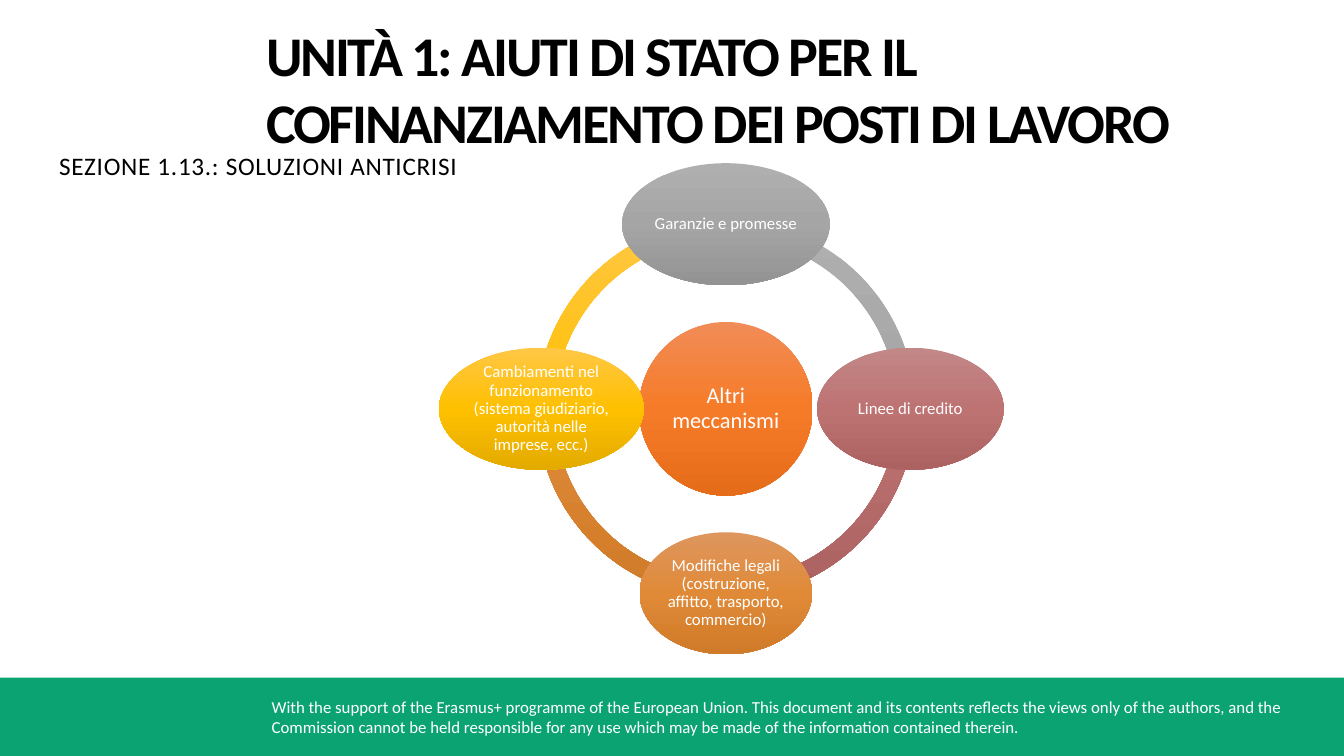
import copy
import dataclasses
import math

import pptx
import pptx.dml.color
import pptx.enum.shapes
import pptx.enum.text
import pptx.oxml
import pptx.oxml.ns
import pptx.presentation
import pptx.shapes.autoshape
import pptx.slide
import pptx.text.text
import pptx.util

Pt = pptx.util.Pt
SHAPES = pptx.enum.shapes.MSO_SHAPE
ALIGN = pptx.enum.text.PP_ALIGN
ANCHOR = pptx.enum.text.MSO_ANCHOR

FONT = "Calibri"
COLOURS = {"black": "000000", "white": "FFFFFF", "green": "0CA373"}
GRADIENTS = {
    "orange": ("F18C57", "F67B28", "E56C19"),
    "grey": ("AFAFAF", "A5A5A5", "939393"),
    "rose": ("C28787", "BE7373", "AD6262"),
    "amber": ("DE965E", "E08A38", "D07B29"),
    "yellow": ("FFC746", "FFC000", "E3AB00"),
}

CENTRE_X, CENTRE_Y = 518.5, 292
RING_DIAMETER = 270
ORBIT_RADIUS = 131.8
HUB_DIAMETER = 124
SATELLITE_HEIGHT = 87.2
ARC_THICKNESS = 0.046
ARC_DEGREE = 0.6  # one degree in the units of a shape adjustment


@dataclasses.dataclass(frozen=True)
class Satellite:
    """An ellipse on the ring; its arc runs from its angle to the next one."""

    text: str
    angle: int
    width: float
    gradient: str


SATELLITES = (
    Satellite("Garanzie e promesse", 270, 148.3, "grey"),
    Satellite("Linee di credito", 0, 133.2, "rose"),
    Satellite("Modifiche legali (costruzione, affitto, trasporto, commercio)", 90, 123.2, "amber"),
    Satellite(
        "Cambiamenti nel funzionamento (sistema giudiziario, autorità nelle imprese, ecc.)",
        180, 146.2, "yellow",
    ),
)


def rgb(value: str) -> pptx.dml.color.RGBColor:
    return pptx.dml.color.RGBColor.from_string(value)


def write_text(
    frame: pptx.text.text.TextFrame,
    text: str,
    *,
    size: float,
    colour: str = "white",
    bold: bool = False,
    letter_spacing: float = 0,
    alignment: ALIGN = ALIGN.LEFT,
    anchor: ANCHOR = ANCHOR.TOP,
    line_spacing: float = 1.0,
    insets: tuple[float, float, float, float] = (7.2, 3.6, 7.2, 3.6),
) -> None:
    frame.word_wrap = True
    frame.auto_size = pptx.enum.text.MSO_AUTO_SIZE.NONE
    frame.vertical_anchor = anchor
    frame.margin_left, frame.margin_top, frame.margin_right, frame.margin_bottom = map(Pt, insets)
    paragraph = frame.paragraphs[0]
    paragraph.alignment = alignment
    paragraph.line_spacing = line_spacing
    paragraph.space_before = Pt(0)
    run = paragraph.add_run()
    run.text = text
    run.font.name = FONT
    run.font.size = Pt(size)
    run.font.bold = bold
    run.font.color.rgb = rgb(COLOURS[colour])
    if letter_spacing:
        run.font._element.set("spc", str(round(letter_spacing * 100)))


def remove_bullet(paragraph: pptx.text.text._Paragraph) -> None:
    properties = paragraph._p.get_or_add_pPr()
    properties.set("marL", "0")
    properties.set("indent", "0")
    properties.append(pptx.oxml.parse_xml(f"<a:buNone {pptx.oxml.ns.nsdecls('a')}/>"))


def place(shape: pptx.shapes.base.BaseShape, left: float, top: float, width: float, height: float) -> None:
    shape.left, shape.top, shape.width, shape.height = map(Pt, (left, top, width, height))


def add_plain_shape(
    slide: pptx.slide.Slide, kind: SHAPES, centre_x: float, centre_y: float, width: float, height: float
) -> pptx.shapes.autoshape.Shape:
    """Add a shape around its centre, without line or shadow."""
    shape = slide.shapes.add_shape(
        kind, Pt(centre_x - width / 2), Pt(centre_y - height / 2), Pt(width), Pt(height)
    )
    shape.shadow.inherit = False
    shape.line.fill.background()
    return shape


def fill_gradient(shape: pptx.shapes.autoshape.Shape, name: str) -> None:
    """Fill from top to bottom with three evenly spaced colours."""
    shape.fill.gradient()
    shape.fill.gradient_angle = 270
    first_stop = shape._element.spPr.find(".//" + pptx.oxml.ns.qn("a:gs"))
    first_stop.addnext(copy.deepcopy(first_stop))
    for index, (stop, colour) in enumerate(zip(shape.fill.gradient_stops, GRADIENTS[name])):
        stop.position = index / 2
        stop.color.rgb = rgb(colour)


def add_ellipse(
    slide: pptx.slide.Slide, text: str, centre_x: float, centre_y: float,
    width: float, height: float, gradient: str, size: float,
) -> None:
    ellipse = add_plain_shape(slide, SHAPES.OVAL, centre_x, centre_y, width, height)
    fill_gradient(ellipse, gradient)
    write_text(ellipse.text_frame, text, size=size, alignment=ALIGN.CENTER,
               anchor=ANCHOR.MIDDLE, line_spacing=0.9, insets=(1.4, 1.4, 1.4, 1.4))


def add_arc(slide: pptx.slide.Slide, satellite: Satellite) -> None:
    arc = add_plain_shape(slide, SHAPES.BLOCK_ARC, CENTRE_X, CENTRE_Y, RING_DIAMETER, RING_DIAMETER)
    arc.adjustments[0] = satellite.angle * ARC_DEGREE
    arc.adjustments[1] = (satellite.angle + 90) % 360 * ARC_DEGREE
    arc.adjustments[2] = ARC_THICKNESS
    fill_gradient(arc, satellite.gradient)


def add_cycle(slide: pptx.slide.Slide) -> None:
    for satellite in reversed(SATELLITES):
        add_arc(slide, satellite)
    add_ellipse(slide, "Altri meccanismi", CENTRE_X, CENTRE_Y, HUB_DIAMETER, HUB_DIAMETER, "orange", 16)
    for satellite in SATELLITES:
        angle = math.radians(satellite.angle)
        add_ellipse(
            slide, satellite.text,
            CENTRE_X + ORBIT_RADIUS * math.cos(angle), CENTRE_Y + ORBIT_RADIUS * math.sin(angle),
            satellite.width, SATELLITE_HEIGHT, satellite.gradient, 12,
        )


def add_headings(slide: pptx.slide.Slide) -> None:
    title, section = slide.placeholders
    place(title, 190, 13.5, 650, 100)
    write_text(title.text_frame, "UNITÀ 1: AIUTI DI STATO PER IL COFINANZIAMENTO DEI POSTI DI LAVORO",
               size=40, colour="black", bold=True, letter_spacing=-1.5, insets=(0, 1, 0, 0))
    place(section, 35, 103.7, 480, 52)
    remove_bullet(section.text_frame.paragraphs[0])
    write_text(section.text_frame, "SEZIONE 1.13.: SOLUZIONI ANTICRISI",
               size=18, colour="black", letter_spacing=0.5)


def add_footer(slide: pptx.slide.Slide) -> None:
    band = add_plain_shape(slide, SHAPES.RECTANGLE, 480, 512, 960, 56)
    band.fill.solid()
    band.fill.fore_color.rgb = rgb(COLOURS["green"])
    notice = slide.shapes.add_textbox(Pt(187), Pt(494), Pt(750), Pt(36))
    write_text(
        notice.text_frame,
        "With the support of the Erasmus+ programme of the European Union. This document and its "
        "contents reflects the views only of the authors, and the Commission cannot be held "
        "responsible for any use which may be made of the information contained therein.",
        size=12,
    )


def main() -> None:
    presentation = pptx.Presentation()
    presentation.slide_width, presentation.slide_height = Pt(960), Pt(540)
    slide = presentation.slides.add_slide(presentation.slide_layouts[1])
    add_headings(slide)
    add_footer(slide)
    add_cycle(slide)
    presentation.save("out.pptx")


if __name__ == "__main__":
    main()
